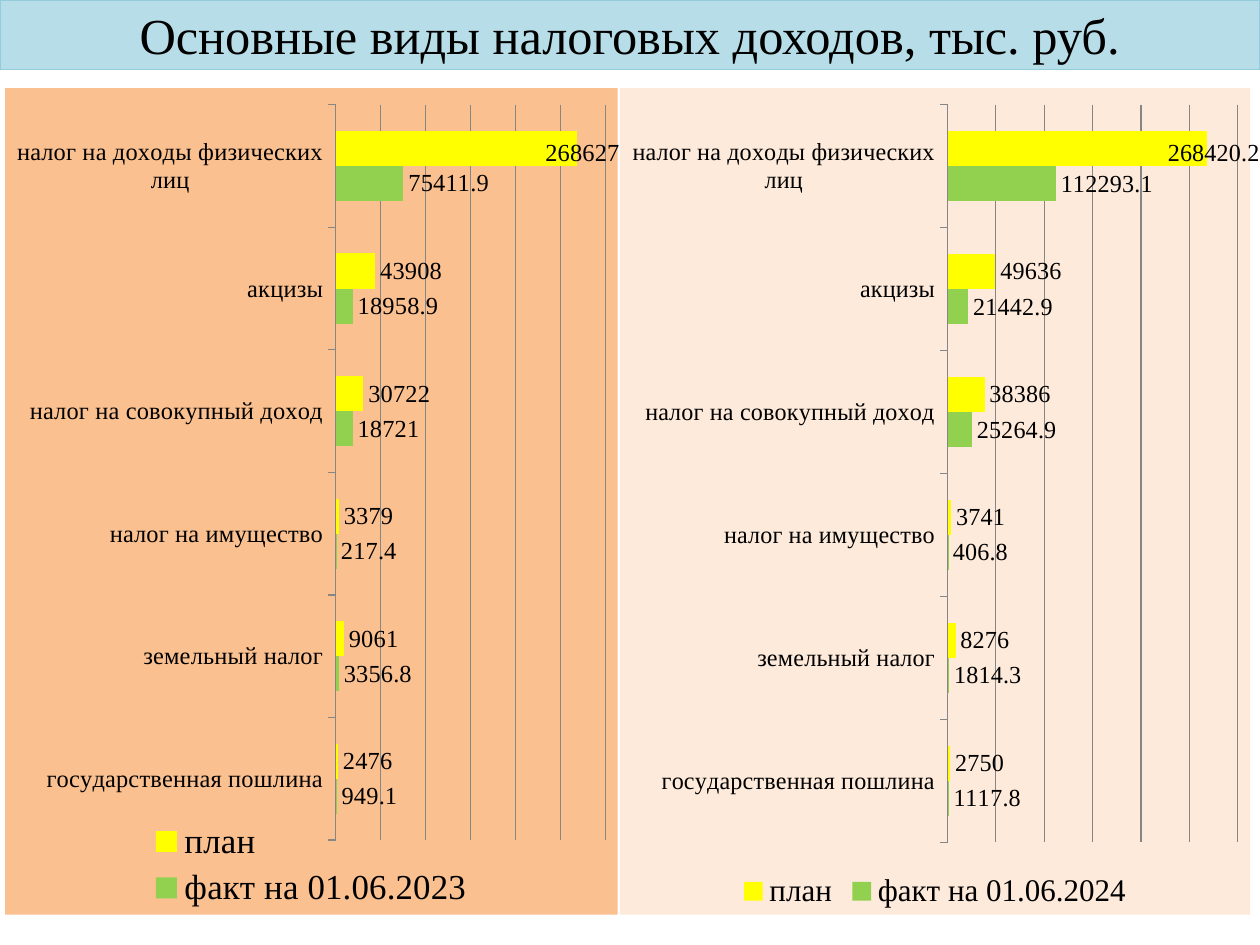
import pptx
import pptx.chart.data
import pptx.util
from lxml import etree
from pptx.dml.color import RGBColor
from pptx.enum.chart import XL_CHART_TYPE, XL_LEGEND_POSITION, XL_TICK_LABEL_POSITION, XL_TICK_MARK
from pptx.enum.shapes import MSO_SHAPE
from pptx.enum.text import MSO_ANCHOR, PP_ALIGN
from pptx.oxml import parse_xml
from pptx.oxml.ns import nsdecls, qn
from pptx.util import Inches, Pt

FONT = "Times New Roman"
BLACK = RGBColor(0x00, 0x00, 0x00)
GRAY = RGBColor(0x86, 0x86, 0x86)
TITLE_FILL = RGBColor(0xB7, 0xDE, 0xE8)
TITLE_LINE = RGBColor(0x93, 0xCD, 0xDD)
PLAN = RGBColor(0xFF, 0xFF, 0x00)
FACT = RGBColor(0x92, 0xD0, 0x50)
ORANGE = RGBColor(0xFA, 0xC0, 0x90)
PEACH = RGBColor(0xFD, 0xEA, 0xDA)

TAXES = ["государственная пошлина", "земельный налог", "налог на имущество",
         "налог на совокупный доход", "акцизы", "налог на доходы физических лиц"]
FACT_2023 = [949.1, 3356.8, 217.4, 18721, 18958.9, 75411.9]
PLAN_2023 = [2476, 9061, 3379, 30722, 43908, 268627]
FACT_2024 = [1117.8, 1814.3, 406.8, 25264.9, 21442.9, 112293.1]
PLAN_2024 = [2750, 8276, 3741, 38386, 49636, 268420.2]


def style_font(font, size, name=FONT):
    font.name = name
    font.size = Pt(size)
    font.color.rgb = BLACK


def manual_layout(**values):
    """Build a c:layout element from its child values, in schema order."""
    layout = parse_xml(f"<c:layout {nsdecls('c')}><c:manualLayout/></c:layout>")
    for tag, value in values.items():
        etree.SubElement(layout[0], qn(f"c:{tag}")).set("val", str(value))
    return layout


def fill_chart_area(chart, color):
    area = parse_xml(
        f"<c:spPr {nsdecls('c', 'a')}><a:solidFill><a:srgbClr val='{color}'/></a:solidFill>"
        "<a:ln><a:noFill/></a:ln></c:spPr>")
    chart.element.find(qn("c:chart")).addnext(area)


def add_title(slide, text):
    s = slide.shapes.add_shape(MSO_SHAPE.RECTANGLE, 0, 0, Inches(10), Inches(0.55))
    s.shadow.inherit = False
    s.fill.solid()
    s.fill.fore_color.rgb = TITLE_FILL
    s.line.color.rgb = TITLE_LINE
    s.line.width = Pt(0.75)
    tf = s.text_frame
    tf.text = text
    tf.word_wrap = True
    tf.vertical_anchor = MSO_ANCHOR.MIDDLE
    tf.margin_top = tf.margin_bottom = 0
    p = tf.paragraphs[0]
    p.alignment = PP_ALIGN.CENTER
    style_font(p.runs[0].font, 28.8)


def style_axes(chart):
    cat = chart.category_axis
    cat.major_tick_mark = XL_TICK_MARK.OUTSIDE
    cat.minor_tick_mark = XL_TICK_MARK.NONE
    cat.tick_label_position = XL_TICK_LABEL_POSITION.NEXT_TO_AXIS
    cat.format.line.color.rgb = GRAY
    style_font(cat.tick_labels.font, 14)
    val = chart.value_axis
    val.visible = False
    val.has_major_gridlines = True
    val.major_gridlines.format.line.color.rgb = GRAY


def add_tax_chart(slide, left, width, year, fact, plan, fill, legend_size, label_shift):
    data = pptx.chart.data.CategoryChartData()
    data.categories = TAXES
    data.add_series(f"факт на 01.06.{year}", fact)
    data.add_series("план", plan)
    chart = slide.shapes.add_chart(
        XL_CHART_TYPE.BAR_CLUSTERED, Inches(left), Inches(0.7),
        Inches(width), Inches(6.56), data).chart
    chart.has_title = False
    style_font(chart.font, 18, "Calibri")
    fill_chart_area(chart, fill)
    style_axes(chart)

    # Bars and their values
    plot = chart.plots[0]
    plot.gap_width = 150
    plot.vary_by_categories = False
    for series, color in zip(plot.series, (FACT, PLAN)):
        series.format.fill.solid()
        series.format.fill.fore_color.rgb = color
        series.data_labels.show_value = True
        style_font(series.data_labels.font, 14)

    # The longest bar's label is pulled back over the bar
    label = plot.series[1].points[len(TAXES) - 1].data_label
    style_font(label.font, 14)
    dlbl = next(chart.element.iter(qn("c:dLbl")))
    dlbl.insert(1, manual_layout(x=label_shift, y=0.005))

    # Legend
    chart.has_legend = True
    chart.legend.position = XL_LEGEND_POSITION.BOTTOM
    chart.legend.include_in_layout = False
    style_font(chart.legend.font, legend_size)
    return chart


def set_plot_area(chart, x, y, w, h):
    area = next(chart.element.iter(qn("c:plotArea")))
    for old in area.findall(qn("c:layout")):
        area.remove(old)
    area.insert(0, manual_layout(layoutTarget="inner", xMode="edge", yMode="edge",
                                 x=x, y=y, w=w, h=h))


def main():
    prs = pptx.Presentation()
    prs.slide_width, prs.slide_height = Inches(10), Inches(7.5)
    slide = prs.slides.add_slide(prs.slide_layouts[6])
    add_title(slide, "Основные виды налоговых доходов, тыс. руб.")
    add_tax_chart(slide, 4.92, 5.08, 2024, FACT_2024, PLAN_2024, PEACH, 18, -0.07)
    chart = add_tax_chart(slide, 0.04, 4.88, 2023, FACT_2023, PLAN_2023, ORANGE, 20, -0.06)
    set_plot_area(chart, 0.54, 0.02, 0.44, 0.89)
    prs.save("out.pptx")


if __name__ == "__main__":
    main()
